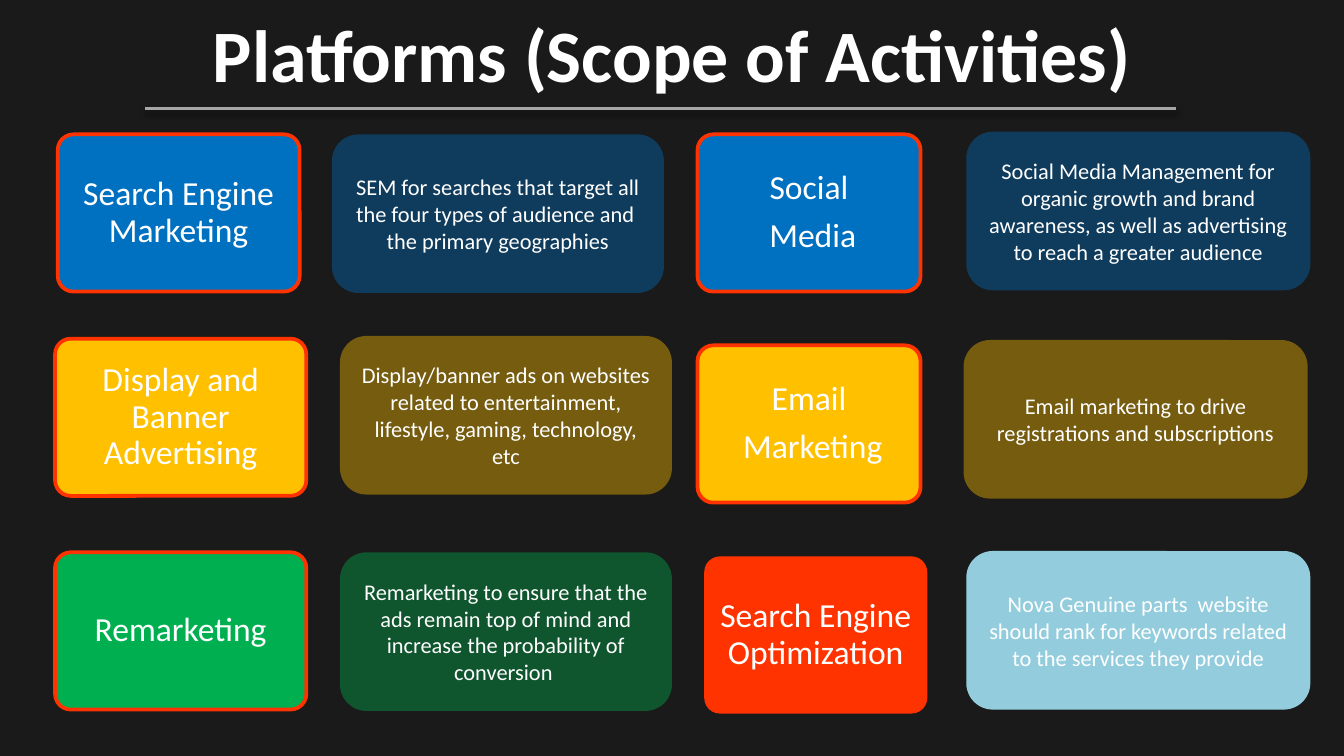
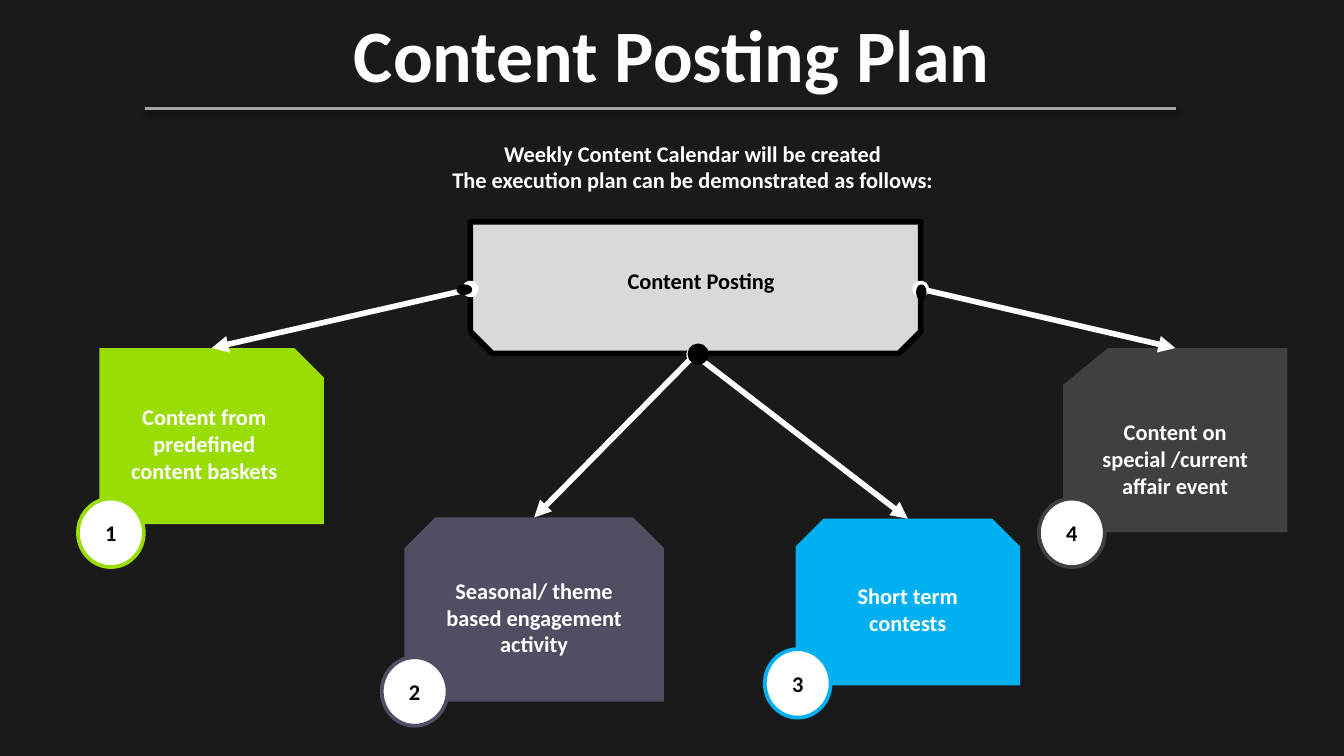
import pptx
import pptx.dml.color
import pptx.enum.shapes
import pptx.enum.text
import pptx.oxml
import pptx.oxml.ns
import pptx.util

Inches = pptx.util.Inches
Pt = pptx.util.Pt
qn = pptx.oxml.ns.qn
SHAPE = pptx.enum.shapes.MSO_SHAPE
ALIGN = pptx.enum.text.PP_ALIGN
ANCHOR = pptx.enum.text.MSO_ANCHOR
STRAIGHT = pptx.enum.shapes.MSO_CONNECTOR.STRAIGHT
A_NS = 'xmlns:a="http://schemas.openxmlformats.org/drawingml/2006/main"'

BACKGROUND = "1A1A1A"
WHITE = "FFFFFF"
BLACK = "000000"
BLUE = "0070C0"
AMBER = "FFC000"
GREEN = "00B050"
RED = "FF3300"
RULE_SHADOW = (
    f'<a:effectLst {A_NS}><a:outerShdw blurRad="39370" dist="22860" dir="5400000">'
    '<a:srgbClr val="000000"><a:alpha val="35000"/></a:srgbClr>'
    '</a:outerShdw></a:effectLst>'
)


def rgb(value):
    return pptx.dml.color.RGBColor.from_string(value)


def add_box(slide, kind, box, fill=None, line=None, text="", size=12, color=WHITE,
            bold=False, insets=(0.12, 0.06), align=ALIGN.CENTER, anchor=ANCHOR.MIDDLE):
    """Add a preset shape, or a text box if kind is None; line is (colour, points)."""
    place = [Inches(value) for value in box]
    if kind is None:
        shape = slide.shapes.add_textbox(*place)
    else:
        shape = slide.shapes.add_shape(kind, *place)
        shape.shadow.inherit = False
        shape.fill.solid()
        shape.fill.fore_color.rgb = rgb(fill)
        if line:
            shape.line.color.rgb = rgb(line[0])
            shape.line.width = Pt(line[1])
        else:
            shape.line.fill.background()
    frame = shape.text_frame
    frame.word_wrap = True
    frame.vertical_anchor = anchor
    frame.margin_left = frame.margin_right = Inches(insets[0])
    frame.margin_top = frame.margin_bottom = Inches(insets[1])
    frame.text = text
    for paragraph in frame.paragraphs:
        paragraph.alignment = align
        for run in paragraph.runs:
            run.font.name = "Calibri"
            run.font.size = Pt(size)
            run.font.bold = bold
            run.font.color.rgb = rgb(color)
    return shape


presentation = pptx.Presentation()
presentation.slide_width = Inches(10)
presentation.slide_height = Inches(5.625)

# Both slides: dark background, title and rule
slides = []
for title in ("Platforms (Scope of Activities)", "Content Posting Plan"):
    slide = presentation.slides.add_slide(presentation.slide_layouts[6])
    slide.background.fill.solid()
    slide.background.fill.fore_color.rgb = rgb(BACKGROUND)
    rule = slide.shapes.add_connector(
        STRAIGHT, Inches(1.08), Inches(0.81), Inches(8.75), Inches(0.81))
    rule.line.color.rgb = rgb("A6A6A6")
    rule.line.width = Pt(1.5)
    rule._element.spPr.append(pptx.oxml.parse_xml(RULE_SHADOW))
    add_box(slide, None, (0.5, 0.06, 9, 0.67), text=title, size=39.6, bold=True,
            insets=(0.1, 0.05))
    slides.append(slide)
platforms_slide, posting_slide = slides

# Slide 1: platform descriptions (left, top, width, fill, opacity in percent, text)
descriptions = [
    (2.47, 1.0, 2.47, BLUE, 40, "SEM for searches that target all the four types of "
     "audience and  the primary geographies"),
    (7.19, 0.98, 2.56, BLUE, 40, "Social Media Management for organic growth and brand "
     "awareness, as well as advertising to reach a greater audience"),
    (2.53, 2.5, 2.47, AMBER, 40, "Display/banner ads on websites related to "
     "entertainment, lifestyle, gaming, technology, etc"),
    (7.17, 2.53, 2.56, AMBER, 40, "Email marketing to drive registrations and "
     "subscriptions"),
    (2.53, 4.11, 2.47, GREEN, 40, "Remarketing to ensure that the ads remain top of "
     "mind and increase the probability of conversion "),
    (7.19, 4.1, 2.56, "93CDDD", 100, "Nova Genuine parts  website should rank for "
     "keywords related to the services they provide"),
]
for left, top, width, fill, opacity, text in descriptions:
    shape = add_box(platforms_slide, SHAPE.ROUNDED_RECTANGLE, (left, top, width, 1.18),
                    fill, text=text, insets=(0.08, 0.08))
    if opacity < 100:
        fill_color = shape._element.spPr.find(qn("a:solidFill"))[0]
        fill_color.append(pptx.oxml.parse_xml(
            f'<a:alpha {A_NS} val="{opacity * 1000}"/>'))

# Slide 1: platform names (left, top, width, fill, outline, text)
red_outline = (RED, 2)
platforms = [
    (0.43, 1.0, 1.8, BLUE, red_outline, "Search Engine Marketing"),
    (5.19, 1.0, 1.66, BLUE, red_outline, "Social\n Media"),
    (0.41, 2.52, 1.87, AMBER, red_outline, "Display and Banner Advertising"),
    (5.19, 2.57, 1.66, AMBER, red_outline, "Email\n Marketing"),
    (0.41, 4.11, 1.87, GREEN, red_outline, "Remarketing"),
    (5.24, 4.14, 1.66, RED, None, "Search Engine Optimization"),
]
for left, top, width, fill, outline, text in platforms:
    shape = add_box(platforms_slide, SHAPE.ROUNDED_RECTANGLE, (left, top, width, 1.17),
                    fill, outline, text, size=18, insets=(0.08, 0.08))
    shape.adjustments[0] = 0.1
    for paragraph in shape.text_frame.paragraphs:
        paragraph.line_spacing = 0.9
        paragraph.space_after = Pt(6.3)

# Slide 2: introduction and hub
add_box(posting_slide, None, (0.76, 0.98, 8.79, 0.52), bold=True, anchor=ANCHOR.TOP,
        text="Weekly Content Calendar will be created\n"
             "The execution plan can be demonstrated as follows:")
hub = add_box(posting_slide, SHAPE.SNIP_2_SAME_RECTANGLE, (3.5, 1.65, 3.35, 0.98),
              "D9D9D9", (BLACK, 3))
hub._element.spPr.find(qn("a:xfrm")).set("flipV", "1")

# Slide 2: content types (kind, box, fill, text, arrow start, badge corner)
hub_left, hub_bottom, hub_right = (3.5, 2.15), (5.17, 2.64), (6.85, 2.15)
content_types = [
    (SHAPE.SNIP_1_RECTANGLE, (0.74, 2.59, 1.67, 1.31), "9ADC06",
     "Content from predefined content baskets", hub_left, (0.58, 3.71)),
    (SHAPE.SNIP_2_SAME_RECTANGLE, (3.01, 3.85, 1.93, 1.37), "4F4E62",
     "Seasonal/ theme based engagement activity", hub_bottom, (2.84, 4.89)),
    (SHAPE.SNIP_2_SAME_RECTANGLE, (5.92, 3.86, 1.67, 1.24), "00B0F0",
     "Short term contests", hub_bottom, (5.69, 4.83)),
    (SHAPE.FLOWCHART_CARD, (7.91, 2.59, 1.67, 1.37), "404040",
     "Content on special /current affair event", hub_right, (7.73, 3.71)),
]
for number, (kind, box, fill, text, start, badge) in enumerate(content_types, 1):
    add_box(posting_slide, kind, box, fill, text=text, bold=True)
    left, top, width, height = box
    arrow = posting_slide.shapes.add_connector(
        STRAIGHT, Inches(start[0]), Inches(start[1]),
        Inches(left + width / 2), Inches(top))
    arrow.line.color.rgb = rgb(WHITE)
    arrow.line.width = Pt(3)
    for end, style in (("headEnd", "oval"), ("tailEnd", "triangle")):
        arrow.line._ln.append(pptx.oxml.parse_xml(f'<a:{end} {A_NS} type="{style}"/>'))
    arrow._element.spPr.append(pptx.oxml.parse_xml(f"<a:effectLst {A_NS}/>"))
    add_box(posting_slide, SHAPE.OVAL, (*badge, 0.49, 0.51), WHITE, (fill, 2),
            str(number), color=BLACK, bold=True)

# Slide 2: dots where the arrows leave the hub, and the hub's label
for dot in ((5.13, 2.57, 0.13, 0.13), (6.83, 2.13, 0.05, 0.09), (3.41, 2.13, 0.09, 0.05)):
    add_box(posting_slide, SHAPE.OVAL, dot, BLACK, (BLACK, 2))
add_box(posting_slide, None, (4.55, 1.93, 1.97, 0.33), text="Content Posting",
        color=BLACK, bold=True, align=ALIGN.LEFT, anchor=ANCHOR.TOP)

presentation.save("out.pptx")
